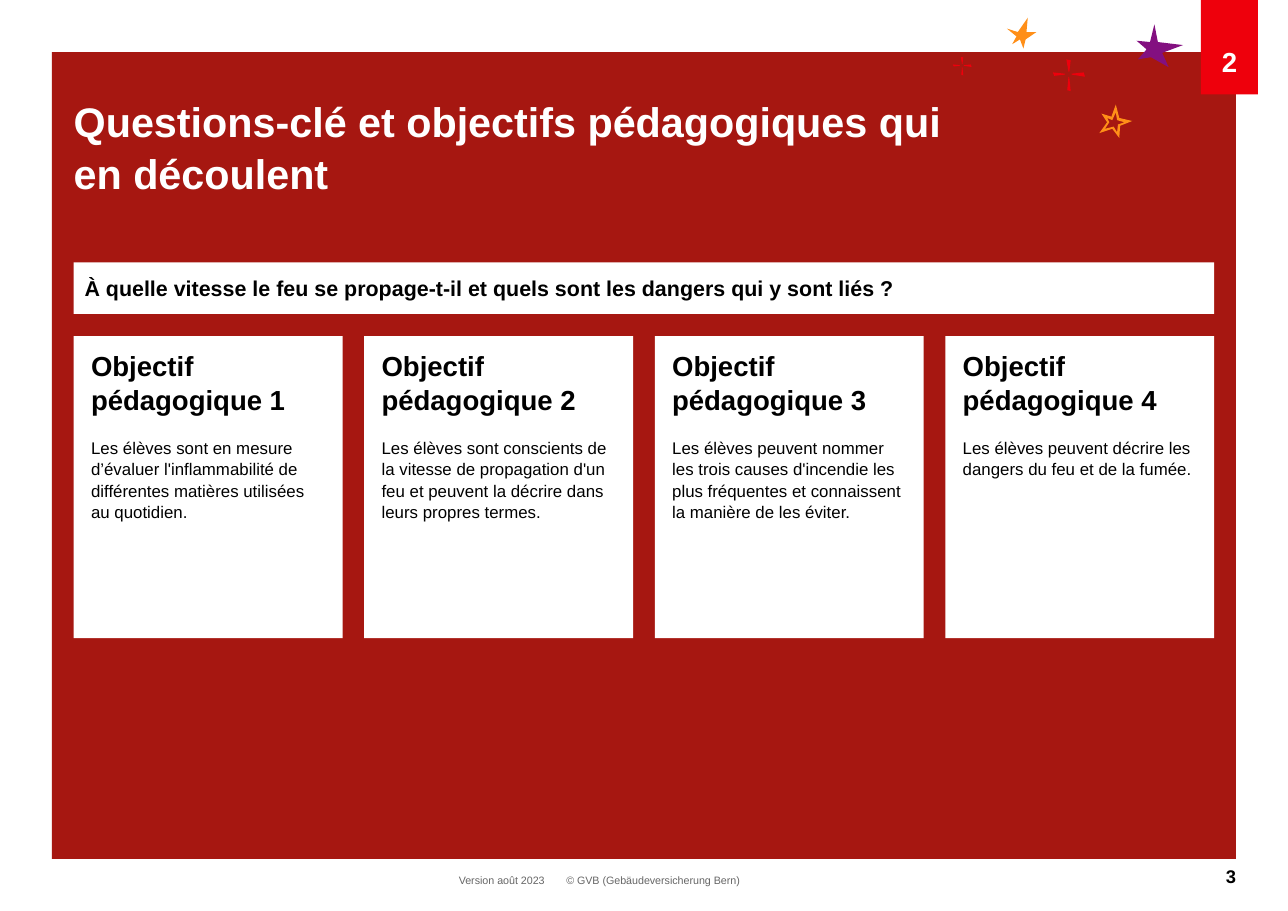
from dataclasses import dataclass
from lxml import etree
from pptx import Presentation
from pptx.dml.color import RGBColor
from pptx.enum.shapes import MSO_SHAPE
from pptx.enum.text import MSO_ANCHOR, PP_ALIGN
from pptx.util import Cm, Pt

RECTANGLE = MSO_SHAPE.RECTANGLE
TOP, MIDDLE, BOTTOM = MSO_ANCHOR.TOP, MSO_ANCHOR.MIDDLE, MSO_ANCHOR.BOTTOM
LEFT, CENTER, RIGHT = PP_ALIGN.LEFT, PP_ALIGN.CENTER, PP_ALIGN.RIGHT


@dataclass
class Theme:
    font: str = "Arial"
    panel: str = "A61711"
    red: str = "EE000C"
    orange: str = "FF8F18"
    purple: str = "831080"
    white: str = "FFFFFF"
    black: str = "000000"
    grey: str = "666666"
    title: int = 27
    heading: int = 18
    question: int = 14
    number: int = 12
    body: int = 11
    footer: int = 7


theme = Theme()


def draw_outline(shapes, contours, colour):
    builder = None
    for contour in contours:
        points = [(Cm(x), Cm(y)) for x, y in contour]
        if builder is None:
            builder = shapes.build_freeform(*points[0], scale=1.0)
        else:
            builder.move_to(*points[0])
        builder.add_line_segments(points[1:], close=True)
    outline = builder.convert_to_shape()
    outline.shadow.inherit = False
    outline.fill.solid()
    outline.fill.fore_color.rgb = RGBColor.from_string(colour)
    outline.line.fill.background()


def add_box(place, lines, fill=None, margins=(0, 0, 0, 0), anchor=TOP, align=LEFT, spacing=1.0):
    left, top, width, height = [Cm(length) for length in place]
    if fill:
        box = page.shapes.add_shape(RECTANGLE, left, top, width, height)
        box.shadow.inherit = False
        box.fill.solid()
        box.fill.fore_color.rgb = RGBColor.from_string(fill)
        box.line.fill.background()
    else:
        box = page.shapes.add_textbox(left, top, width, height)
    frame = box.text_frame
    frame.word_wrap = True
    frame.vertical_anchor = anchor
    frame.margin_left, frame.margin_top, frame.margin_right, frame.margin_bottom = [
        Cm(margin) for margin in margins
    ]
    frame.text = "\n".join(line[0] for line in lines)
    for para, (_, size, colour, bold) in zip(frame.paragraphs, lines):
        para.alignment = align
        para.line_spacing = spacing
        for span in para.runs:
            span.font.name = theme.font
            span.font.size = Pt(size)
            span.font.bold = bold
            span.font.color.rgb = RGBColor.from_string(colour)
    return box


deck = Presentation()
deck.slide_width, deck.slide_height = Cm(29.7), Cm(21)
page = deck.slides.add_slide(deck.slide_layouts[6])

add_box((13.06, 20.14, 4.11, 0.3),
        [("© GVB (Gebäudeversicherung Bern)", theme.footer, theme.grey, False)])
add_box((1.2, 1.2, 27.3, 18.6), [], fill=theme.panel)

purple_star = [(26.52, 0.97), (26.21, 0.94), (26.44, 1.14), (26.24, 1.37), (26.54, 1.32),
               (26.95, 1.55), (26.8, 1.22), (27.28, 1.04), (26.7, 0.97), (26.62, 0.56)]
orange_star = [(23.34, 1.02), (23.52, 0.91), (23.6, 1.12), (23.65, 0.91), (23.9, 0.74),
               (23.67, 0.74), (23.7, 0.41), (23.47, 0.74), (23.22, 0.66), (23.44, 0.84)]
hollow_star_rim = [(25.81, 3.18), (25.65, 2.97), (25.35, 3.07), (25.53, 2.82), (25.4, 2.62),
                   (25.63, 2.69), (25.73, 2.41), (25.81, 2.72), (26.11, 2.79), (25.83, 2.9)]
hollow_star_hole = [(25.68, 2.92), (25.76, 3.05), (25.78, 2.87), (25.93, 2.82), (25.76, 2.77),
                    (25.73, 2.59), (25.65, 2.77), (25.53, 2.72), (25.58, 2.82), (25.48, 2.97)]
for contours, colour in [
    ([purple_star], theme.purple),
    ([orange_star], theme.orange),
    ([hollow_star_rim, hollow_star_hole], theme.orange),
]:
    draw_outline(page.shapes, contours, colour)

sparkle_rays = [
    [(-0.01, -0.06), (-0.06, -0.34), (0.04, -0.32), (0.01, -0.06)],
    [(0.01, 0.09), (0.04, 0.39), (-0.04, 0.37), (-0.01, 0.06)],
    [(0.06, -0.01), (0.34, -0.04), (0.37, 0.06), (0.06, 0.01)],
    [(-0.09, 0.01), (-0.34, 0.04), (-0.37, -0.04), (-0.09, -0.01)],
]
for center_x, center_y, scale in [(24.65, 1.71, 1), (22.19, 1.51, 0.58)]:
    sparkle = page.shapes.add_group_shape()
    for ray in sparkle_rays:
        contour = [(center_x + x * scale, center_y + y * scale) for x, y in ray]
        draw_outline(sparkle.shapes, [contour], theme.red)

add_box((27.69, 0, 1.32, 2.18), [("2", theme.heading, theme.white, True)],
        fill=theme.red, margins=(0, 1.02, 0, 0.38), anchor=BOTTOM, align=CENTER)
add_box((26.7, 19.94, 1.8, 0.43), [("3", theme.number, theme.black, True)], align=RIGHT)
add_box((1.7, 2.16, 20.5, 1.47),
        [("Questions-clé et objectifs pédagogiques qui en découlent", theme.title, theme.white, True)],
        spacing=1.05)

objectives = [
    "Les élèves sont en mesure d’évaluer l'inflammabilité de différentes matières utilisées au quotidien.",
    "Les élèves sont conscients de la vitesse de propagation d'un feu et peuvent la décrire dans leurs propres termes.",
    "Les élèves peuvent nommer les trois causes d'incendie les plus fréquentes et connaissent la manière de les éviter.",
    "Les élèves peuvent décrire les dangers du feu et de la fumée.",
]
card_width, card_gap = 6.2, 0.5
for index, objective in enumerate(objectives):
    card = add_box(
        (1.7 + index * (card_width + card_gap), 7.75, card_width, 6.96),
        [(f"Objectif pédagogique {index + 1}", theme.heading, theme.black, True),
         (objective, theme.body, theme.black, False)],
        fill=theme.white, margins=(0.4, 0.25, 0.4, 0.25), spacing=1.05)
    card.text_frame.paragraphs[1].space_before = Pt(13.3)

add_box((10.49, 20.14, 2.16, 0.33),
        [("Version août 2023", theme.footer, theme.grey, False)], align=CENTER)
add_box((1.7, 6.05, 26.3, 1.19),
        [("À quelle vitesse le feu se propage-t-il et quels sont les dangers qui y sont liés ?",
          theme.question, theme.black, True)],
        fill=theme.white, margins=(0.25, 0.13, 0.25, 0.13), anchor=MIDDLE)

deck.save("out.pptx")
